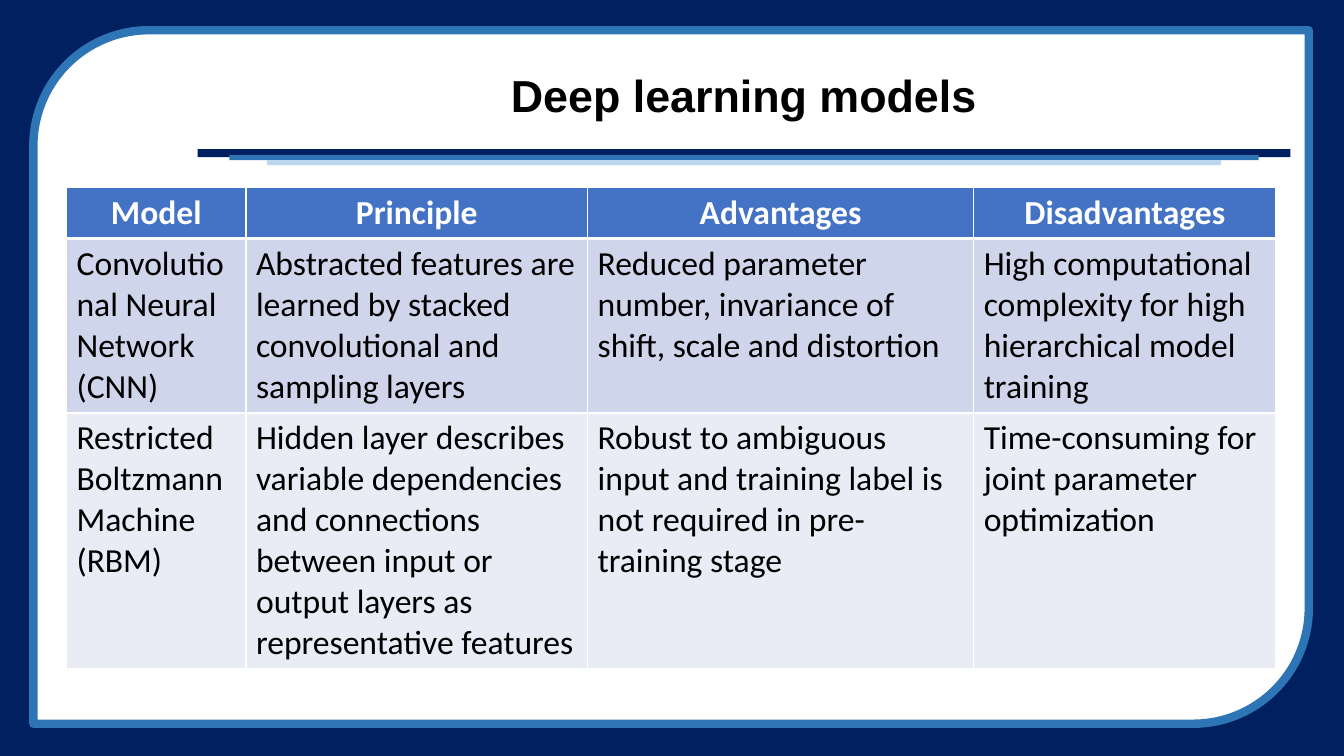
import pptx
import pptx.dml.color
import pptx.enum.shapes
import pptx.enum.text
import pptx.oxml
import pptx.oxml.ns
import pptx.util

ALIGN = pptx.enum.text.PP_ALIGN
SHAPES = pptx.enum.shapes.MSO_SHAPE
WIDTH = pptx.util.Inches(13.33)
HEIGHT = pptx.util.Inches(7.5)
NAVY, BLUE, PALE, WHITE, BLACK = "002060", "2E75B6", "BDD7EE", "FFFFFF", "000000"
ROW_FILLS = ["4472C4", "CFD5EA", "E9EBF5"]

COLUMN_WIDTHS = [13.35, 25.42, 28.73, 22.5]
ROW_HEIGHTS = [6.67, 23.07, 33.73]
MODELS = [
    ["Model", "Principle", "Advantages", "Disadvantages"],
    [
        "Convolutional Neural Network (CNN)",
        "Abstracted features are learned by stacked convolutional and sampling layers",
        "Reduced parameter number, invariance of shift, scale and distortion",
        "High computational complexity for high hierarchical model training",
    ],
    [
        "Restricted Boltzmann Machine (RBM)",
        "Hidden layer describes variable dependencies and connections between input "
        "or output layers as representative features",
        "Robust to ambiguous input and training label is not required in pre-training stage",
        "Time-consuming for joint parameter optimization",
    ],
]


def columns(count):
    """Return the length of a number of hundredths of the slide's width."""
    return int(WIDTH * count / 100)


def rows(count):
    """Return the length of a number of hundredths of the slide's height."""
    return int(HEIGHT * count / 100)


def place(box):
    """Turn a box in grid units into left, top, width and height."""
    left, top, width, height = box
    return columns(left), rows(top), columns(width), rows(height)


def paint(target, color):
    """Give a fill or line format a solid colour from a hex string."""
    target.solid()
    target.fore_color.rgb = pptx.dml.color.RGBColor.from_string(color)


def write(frame, text, font="Calibri", size=24, color=BLACK, bold=False,
          align=ALIGN.LEFT, spacing=1.0):
    """Write one formatted paragraph into a text frame."""
    para = frame.paragraphs[0]
    para.alignment = align
    para.line_spacing = spacing
    span = para.add_run()
    span.text = text
    span.font.name = font
    span.font.size = pptx.util.Pt(size)
    span.font.bold = bold
    paint(span.font.fill, color)


def add_block(page, kind, box, fill, line=None, weight=6):
    """Add a filled preset shape, outlined if a line colour is given."""
    block = page.shapes.add_shape(kind, *place(box))
    block.shadow.inherit = False
    paint(block.fill, fill)
    if line:
        paint(block.line.fill, line)
        block.line.width = pptx.util.Pt(weight)
    else:
        block.line.fill.background()


def add_frame(page, box):
    """Draw the navy surround and the white panel inside the box."""
    left, top, width, height = box
    add_block(page, SHAPES.RECTANGLE, box, NAVY)
    panel = (left + 2.48, top + 4, width - 5.1, height - 8.27)
    add_block(page, SHAPES.ROUND_2_DIAG_RECTANGLE, panel, WHITE, line=BLUE)


def add_heading(page, text, box):
    """Place the title in the box with three narrowing bars beneath it."""
    left, top, width, height = box
    bars = [(0, 0.27, 1.07, NAVY), (2.36, 1.07, 0.67, BLUE), (5.18, 1.73, 0.67, PALE)]
    for inset, drop, thickness, color in bars:
        bar = (left + inset, top + height + drop, width - 2 * inset, thickness)
        add_block(page, SHAPES.RECTANGLE, bar, color)
    title = page.shapes.title
    title.left, title.top, title.width, title.height = place(box)
    title.text_frame.vertical_anchor = pptx.enum.text.MSO_ANCHOR.MIDDLE
    title.text_frame.word_wrap = True
    write(title.text_frame, text, font="Arial", size=32, bold=True,
          align=ALIGN.CENTER, spacing=0.9)
    title.element.getparent().append(title.element)


def add_borders(cell, top, bottom):
    """Give a cell white borders with the stated top and bottom weights."""
    properties = cell._tc.get_or_add_tcPr()
    for side, weight in {"L": 1, "R": 1, "T": top, "B": bottom}.items():
        properties.append(pptx.oxml.parse_xml(
            f'<a:ln{side} {pptx.oxml.ns.nsdecls("a")} w="{pptx.util.Pt(weight)}">'
            f'<a:solidFill><a:srgbClr val="{WHITE}"/></a:solidFill></a:ln{side}>'))


def add_comparison(page, box):
    """Fill the box with the table that compares the models."""
    table = page.shapes.add_table(len(MODELS), len(MODELS[0]), *place(box)).table
    for column, width in zip(table.columns, COLUMN_WIDTHS):
        column.width = columns(width)
    for index, (row, height, texts) in enumerate(zip(table.rows, ROW_HEIGHTS, MODELS)):
        row.height = rows(height)
        header = index == 0
        for cell, text in zip(row.cells, texts):
            add_borders(cell, top=3 if index == 1 else 1, bottom=3 if header else 1)
            paint(cell.fill, ROW_FILLS[index])
            write(cell.text_frame, text, color=WHITE if header else BLACK,
                  bold=header, align=ALIGN.CENTER if header else ALIGN.LEFT)


def main():
    """Build the slide and save it."""
    deck = pptx.Presentation()
    deck.slide_width, deck.slide_height = WIDTH, HEIGHT
    page = deck.slides.add_slide(deck.slide_layouts.get_by_name("Title Only"))
    add_frame(page, (0, 0, 100, 100))
    add_heading(page, "Deep learning models", (14.7, 6.53, 81.32, 12.93))
    add_comparison(page, (4.95, 24.8, sum(COLUMN_WIDTHS), sum(ROW_HEIGHTS)))
    deck.save("out.pptx")


if __name__ == "__main__":
    main()
